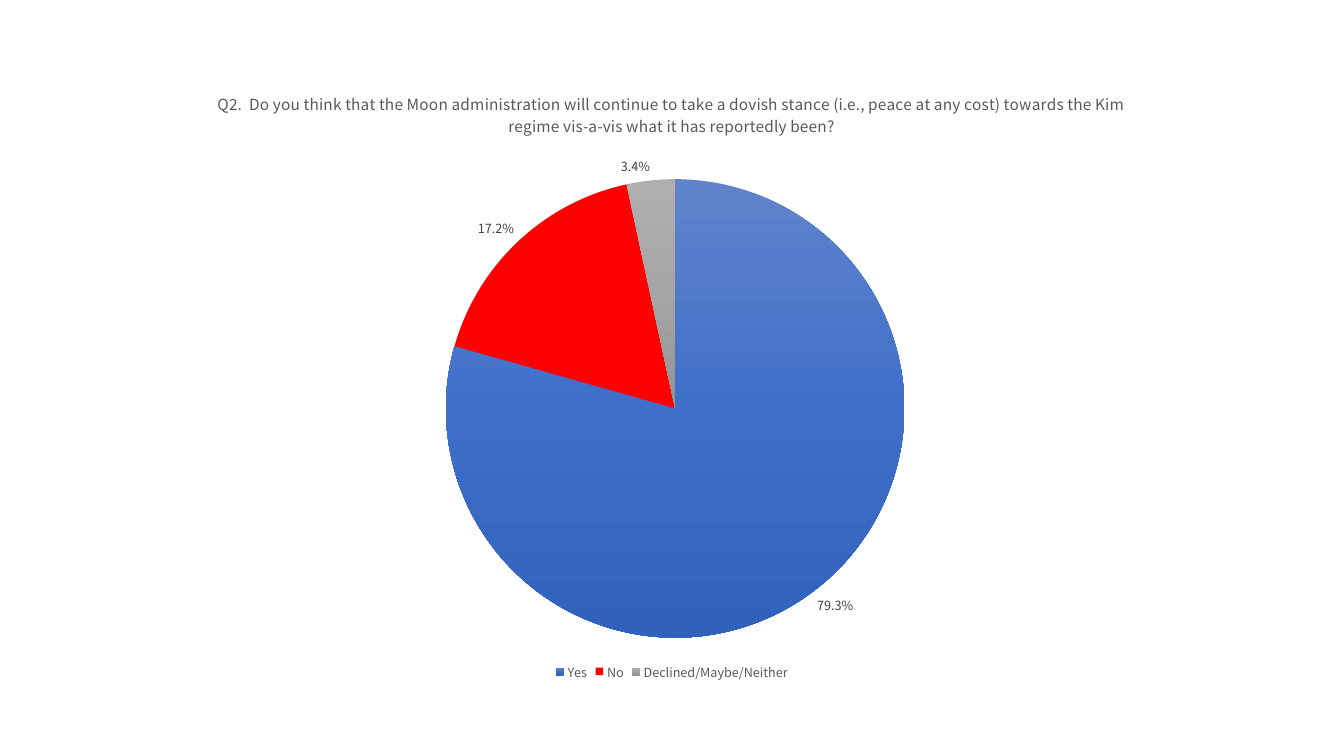
from copy import deepcopy

from pptx import Presentation
from pptx.chart.data import CategoryChartData
from pptx.dml.color import RGBColor
from pptx.enum.chart import XL_CHART_TYPE as Kind
from pptx.enum.chart import XL_LABEL_POSITION as Spot
from pptx.enum.chart import XL_LEGEND_POSITION as Side
from pptx.oxml import parse_xml
from pptx.oxml.ns import nsdecls
from pptx.util import Pt

FONT = "Noto Sans CJK KR"
TITLE = (
    "Q2.  Do you think that the Moon administration will continue to take "
    "a dovish stance (i.e., peace at any cost) towards the Kim regime "
    "vis-a-vis what it has reportedly been?"
)
# answer, share, fill colours from top to bottom
ANSWERS = [
    ("Yes", 0.793, ["6183CB", "3E70CA", "3062BB"]),
    ("No", 0.172, ["FF0000"]),
    ("Declined/Maybe/Neither", 0.034, ["AFAFAF", "A5A5A5", "939393"]),
]
SLIDE = (960, 540)
CHART = (50.4, 50.4, 859, 438.5)
PIE = (318.5, 128, 327.5, 327.5)


def rgb(code):
    return RGBColor.from_string(code)


def style(font, size, color):
    font.name = FONT
    font.size = Pt(size)
    font.bold = False
    font.color.rgb = rgb(color)


def paint(fill, colors):
    """Fill with one colour, or with three shading downwards."""
    if len(colors) == 1:
        fill.solid()
        fill.fore_color.rgb = rgb(colors[0])
        return
    fill.gradient()
    fill.gradient_angle = 270
    first = fill.gradient_stops[0]._gs
    first.addnext(deepcopy(first))
    for i, (stop, color) in enumerate(zip(fill.gradient_stops, colors)):
        stop.position = i / 2
        stop.color.rgb = rgb(color)


def place(chart):
    """Fix the pie's frame as fractions of the chart's frame."""
    left, top, width, height = CHART
    x, y, w, h = PIE
    parts = {
        "x": (x - left) / width,
        "y": (y - top) / height,
        "w": w / width,
        "h": h / height,
    }
    modes = "".join(f'<c:{k}Mode val="edge"/>' for k in "xy")
    sizes = "".join(f'<c:{k} val="{v:.4f}"/>' for k, v in parts.items())
    layout = parse_xml(
        f'<c:layout {nsdecls("c")}><c:manualLayout>'
        f'<c:layoutTarget val="inner"/>{modes}{sizes}'
        "</c:manualLayout></c:layout>"
    )
    area = chart._chartSpace.chart.plotArea
    for old in area.xpath("c:layout"):
        area.remove(old)
    area.insert(0, layout)


def main():
    deck = Presentation()
    deck.slide_width, deck.slide_height = map(Pt, SLIDE)
    slide = deck.slides.add_slide(deck.slide_layouts[6])

    names, shares, fills = zip(*ANSWERS)
    data = CategoryChartData(number_format="0.0%")
    data.categories = names
    data.add_series(TITLE, shares)
    frame = slide.shapes.add_chart(Kind.PIE, *map(Pt, CHART), data)
    chart = frame.chart
    style(chart.font, 10, "000000")

    chart.has_title = True
    run = chart.chart_title.text_frame.paragraphs[0].add_run()
    run.text = TITLE
    style(run.font, 11, "595959")
    chart.chart_title.include_in_layout = False

    chart.has_legend = True
    chart.legend.position = Side.BOTTOM
    chart.legend.include_in_layout = False
    style(chart.legend.font, 9, "595959")

    pie = chart.plots[0]
    pie.vary_by_categories = True
    for i, colors in enumerate(fills):
        paint(pie.series[0].points[i].format.fill, colors)

    labels = pie.series[0].data_labels
    labels.show_value = True
    labels.show_percentage = False
    labels.number_format = "0.0%"
    labels.number_format_is_linked = False
    labels.position = Spot.OUTSIDE_END
    style(labels.font, 9, "404040")

    place(chart)
    deck.save("out.pptx")


if __name__ == "__main__":
    main()
